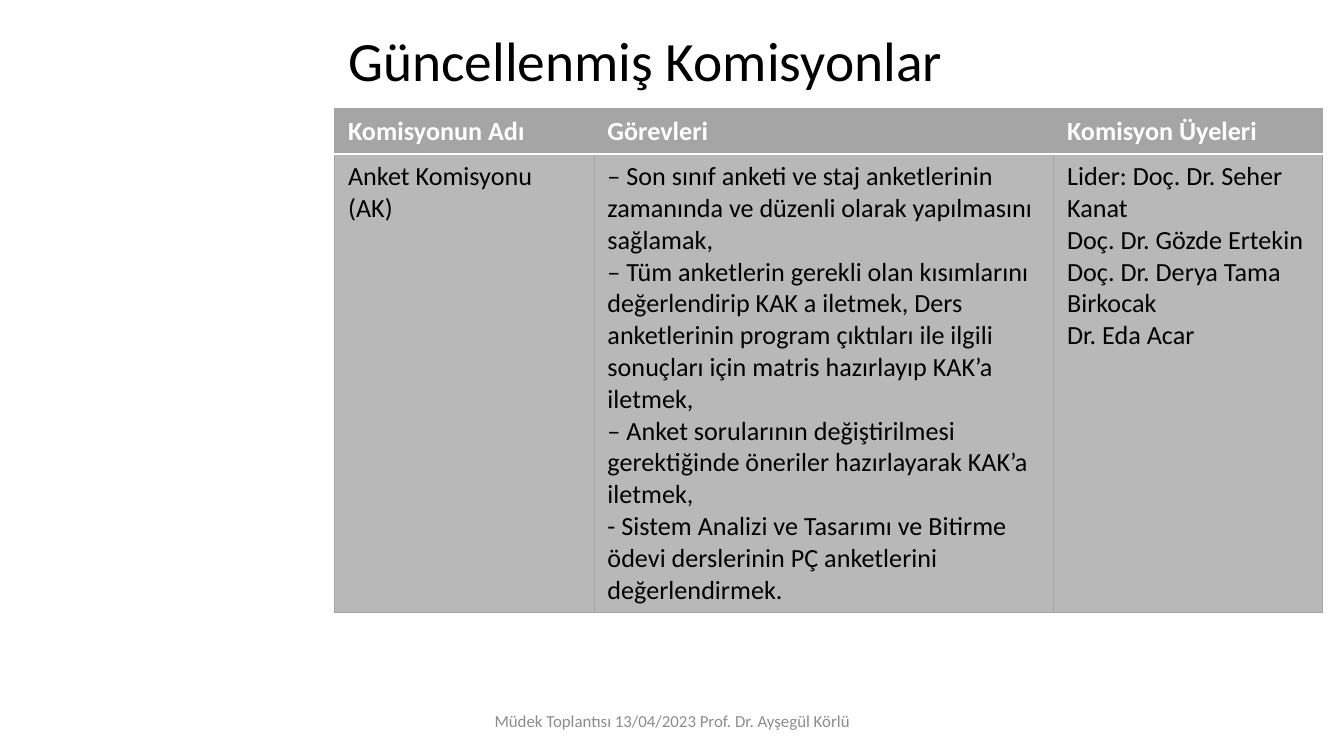
from dataclasses import dataclass

from lxml import etree
from pptx import Presentation
from pptx.dml.color import RGBColor
from pptx.enum import text as t
from pptx.oxml import ns
from pptx.util import Inches, Pt

GREY, PALE, WHITE, BLACK = "A5A5A5", "B8B8B8", "FFFFFF", "000000"


@dataclass
class Row:
    height: float
    fill: str
    font: dict
    edges: dict
    cells: list


def paint(target, color: str) -> None:
    target.rgb = RGBColor.from_string(color)


def write(frame, lines: list, font: dict, **form) -> None:
    """Fill a text frame with one paragraph per line."""
    frame.text = "\n".join(lines)
    for para in frame.paragraphs:
        for key, val in form.items():
            setattr(para, key, val)
        for run in para.runs:
            run.font.name = "Calibri"
            for key, val in font.items():
                if key == "color":
                    paint(run.font.color, val)
                else:
                    setattr(run.font, key, val)


def place(shape, left: float, top: float, width: float, height: float) -> None:
    box = {"left": left, "top": top, "width": width, "height": height}
    for key, val in box.items():
        setattr(shape, key, Inches(val))


def border(cell, edges: dict) -> None:
    props = cell._tc.get_or_add_tcPr()
    for spot, side in enumerate("LRTB"):
        color, width = edges.get(side, (GREY, 0.5))
        line = etree.Element(ns.qn(f"a:ln{side}"), w=str(Pt(width)))
        fill = etree.SubElement(line, ns.qn("a:solidFill"))
        etree.SubElement(fill, ns.qn("a:srgbClr"), val=color)
        props.insert(spot, line)


def draw_row(table, index: int, row: Row) -> None:
    table.rows[index].height = Inches(row.height)
    for cell, lines in zip(table.rows[index].cells, row.cells):
        cell.fill.solid()
        paint(cell.fill.fore_color, row.fill)
        write(cell.text_frame, lines, row.font)
        border(cell, row.edges)


RULE = (WHITE, 1)
WIDTHS = [1.93, 3.42, 2]
ROWS = [
    Row(0.33, GREY, {"size": Pt(14), "bold": True, "color": WHITE}, {"B": RULE},
        [["Komisyonun Adı"], ["Görevleri"], ["Komisyon Üyeleri"]]),
    Row(3.37, PALE, {"size": Pt(14), "bold": False, "color": BLACK}, {"T": RULE}, [
        ["Anket Komisyonu (AK)"],
        ["– Son sınıf anketi ve staj anketlerinin zamanında ve düzenli olarak "
         "yapılmasını sağlamak,",
         "– Tüm anketlerin gerekli olan kısımlarını değerlendirip KAK a iletmek, "
         "Ders anketlerinin program çıktıları ile ilgili sonuçları için matris "
         "hazırlayıp KAK’a iletmek,",
         "– Anket sorularının değiştirilmesi gerektiğinde öneriler hazırlayarak "
         "KAK’a iletmek,",
         "- Sistem Analizi ve Tasarımı ve Bitirme ödevi derslerinin PÇ anketlerini "
         "değerlendirmek."],
        ["Lider: Doç. Dr. Seher Kanat",
         "Doç. Dr. Gözde Ertekin Doç. Dr. Derya Tama Birkocak",
         "Dr. Eda Acar"],
    ]),
]


def main() -> None:
    deck = Presentation()
    deck.slide_width = Inches(10)
    deck.slide_height = deck.slide_width * 9 // 16
    slide = deck.slides.add_slide(deck.slide_layouts[5])

    title = slide.shapes.title
    place(title, 2.49, 0.31, 7.01, 0.33)
    write(title.text_frame, ["Güncellenmiş Komisyonlar"],
          {"size": Pt(29.7), "color": BLACK},
          alignment=t.PP_ALIGN.LEFT, line_spacing=0.9)

    frame = slide.shapes.add_table(
        len(ROWS), len(WIDTHS), Inches(2.49), Inches(0.81),
        Inches(sum(WIDTHS)), Inches(sum(row.height for row in ROWS)))
    table = frame.table
    table.horz_banding = False
    for column, width in zip(table.columns, WIDTHS):
        column.width = Inches(width)
    for index, row in enumerate(ROWS):
        draw_row(table, index, row)

    footer = slide.shapes.add_textbox(0, 0, 0, 0)
    place(footer, 3.31, 5.21, 3.38, 0.3)
    write(footer.text_frame,
          ["Müdek Toplantısı 13/04/2023 Prof. Dr. Ayşegül Körlü"],
          {"size": Pt(9), "color": "8C8C8C"}, alignment=t.PP_ALIGN.CENTER)

    for shape in (title, footer):
        form = {"word_wrap": True, "auto_size": t.MSO_AUTO_SIZE.NONE,
                "vertical_anchor": t.MSO_ANCHOR.MIDDLE}
        for key, val in form.items():
            setattr(shape.text_frame, key, val)

    deck.save("out.pptx")


if __name__ == "__main__":
    main()
